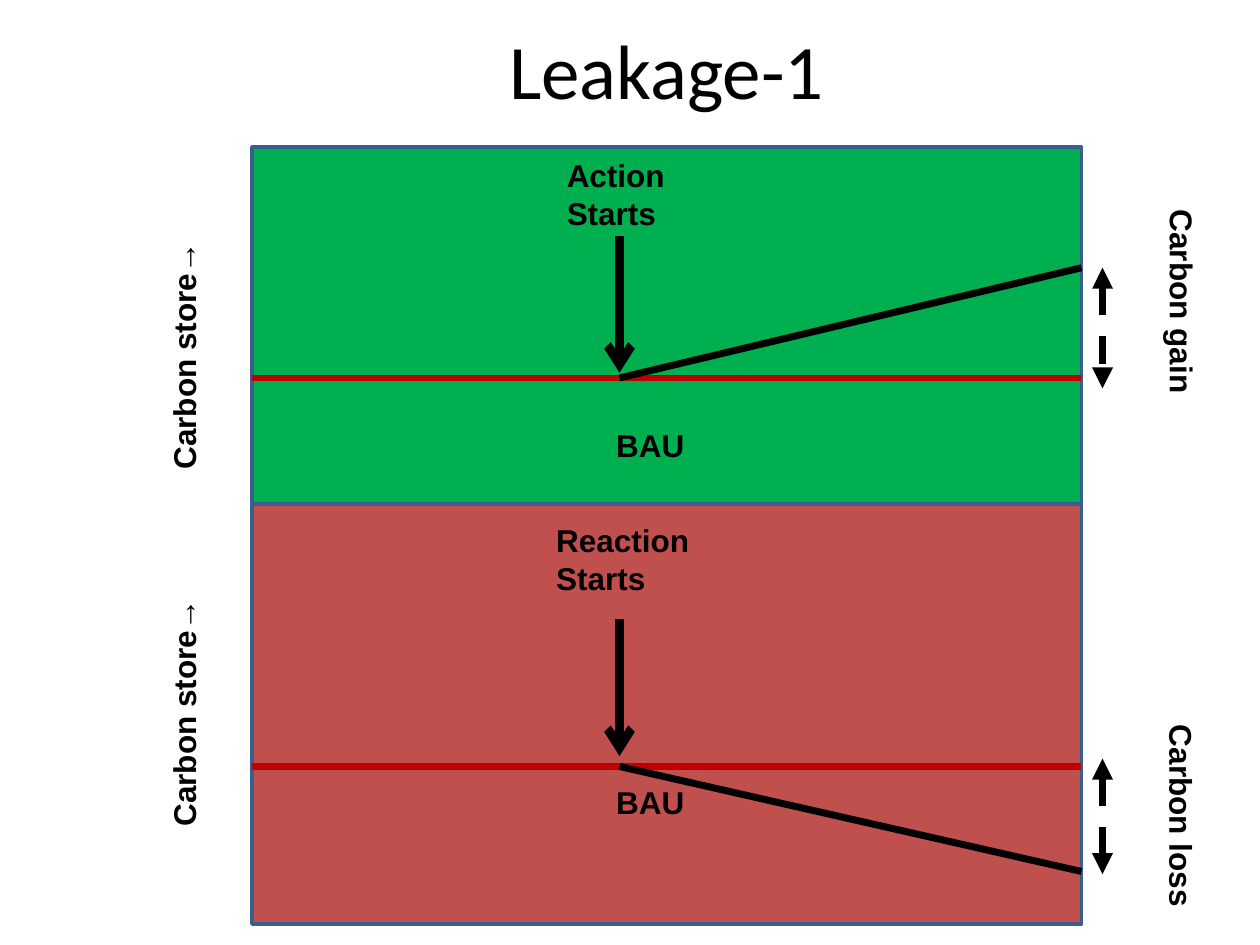
from lxml import etree
from pptx import Presentation
from pptx import util as u
from pptx.dml.color import RGBColor
from pptx.enum import dml, shapes, text
from pptx.oxml import ns

BLACK = RGBColor(0x00, 0x00, 0x00)
GREEN = RGBColor(0x00, 0xB0, 0x50)
RED = RGBColor(0xC0, 0x50, 0x4D)
BASELINE_RED = RGBColor(0xC0, 0x00, 0x00)
OUTLINE_BLUE = RGBColor(0x3A, 0x5F, 0x8C)

TITLE_FORMAT = {"name": "Calibri", "size": u.Pt(44)}
LABEL_FORMAT = {"name": "Arial", "size": u.Pt(18), "bold": True}

COLUMNS, ROWS = 120, 90  # grid of the slide, square cells
PANEL_WIDTH, PANEL_HEIGHT = 79, 40
START_COLUMN = 35  # where the action or reaction begins
ARROW_LENGTH = 13

PANELS = [
    {"box": (24, 14), "fill": GREEN, "baseline": 22, "trend_end": 11.5,
     "change": (11.5, 23), "start_row": 8.5,
     "start_label": ("Action\nStarts", (28.8, 0.3, 12.7, 8.5)),
     "change_label": ("Carbon gain", (78.5, 12.5, 20.2, 4.8))},
    {"box": (24, 48), "fill": RED, "baseline": 25, "trend_end": 35,
     "change": (24.25, 35.25), "start_row": 11,
     "start_label": ("Reaction\nStarts", (27.8, 1, 16.1, 8.5)),
     "change_label": ("Carbon loss", (78.6, 27.4, 19.9, 4.8))},
]


def format_font(font, values):
    for name, value in values.items():
        setattr(font, name, value)
    font.color.rgb = BLACK


def add_title(slide, box, wording):
    title = slide.shapes.title
    title.left, title.top, title.width, title.height = box
    frame = title.text_frame
    frame.text = wording
    frame.vertical_anchor = text.MSO_ANCHOR.MIDDLE
    paragraph = frame.paragraphs[0]
    paragraph.alignment = text.PP_ALIGN.CENTER
    format_font(paragraph.runs[0].font, TITLE_FORMAT)


def add_label(slide, box, wording, rotation=0):
    label = slide.shapes.add_textbox(*box)
    label.rotation = rotation
    frame = label.text_frame
    frame.word_wrap = False
    frame.auto_size = text.MSO_AUTO_SIZE.SHAPE_TO_FIT_TEXT
    frame.text = wording
    for paragraph in frame.paragraphs:
        format_font(paragraph.runs[0].font, LABEL_FORMAT)


def add_line(slide, start, end, color=BLACK, width=4, dash=None, head=None, tail=None):
    connector = slide.shapes.add_connector(
        shapes.MSO_CONNECTOR.STRAIGHT, *start, *end)
    line = connector.line
    line.color.rgb = color
    line.width = u.Pt(width)
    if dash:
        line.dash_style = dash
    properties = connector._element.spPr
    outline = properties.find(ns.qn("a:ln"))
    for tag, kind in (("a:headEnd", head), ("a:tailEnd", tail)):
        if kind:
            etree.SubElement(outline, ns.qn(tag), type=kind)
    etree.SubElement(properties, ns.qn("a:effectLst"))


def add_panel(slide, cell, panel):
    """Draw one carbon store diagram, with its parts counted in cells from its corner."""
    left, top = panel["box"]

    def point(column, row):
        return round((left + column) * cell), round((top + row) * cell)

    def area(column, row, width, height):
        return *point(column, row), round(width * cell), round(height * cell)

    background = slide.shapes.add_shape(
        shapes.MSO_SHAPE.RECTANGLE, *area(0, 0, PANEL_WIDTH, PANEL_HEIGHT))
    background.shadow.inherit = False
    background.fill.solid()
    background.fill.fore_color.rgb = panel["fill"]
    background.line.color.rgb = OUTLINE_BLUE
    background.line.width = u.Pt(2)

    baseline, start_row = panel["baseline"], panel["start_row"]
    change_column = PANEL_WIDTH + 2
    change_top, change_bottom = panel["change"]

    add_label(slide, area(-18.6, 17.4, 24.2, 4.8), "Carbon store→", 270)
    add_line(slide, point(0, baseline), point(PANEL_WIDTH, baseline), BASELINE_RED)
    add_label(slide, area(33.5, 26, 9, 4.8), "BAU")
    add_line(slide, point(START_COLUMN, baseline),
             point(PANEL_WIDTH, panel["trend_end"]))
    add_line(slide, point(change_column, change_top),
             point(change_column, change_bottom),
             dash=dml.MSO_LINE.DASH, head="triangle", tail="triangle")
    add_line(slide, point(START_COLUMN, start_row),
             point(START_COLUMN, start_row + ARROW_LENGTH), width=5, tail="arrow")
    wording, box = panel["start_label"]
    add_label(slide, area(*box), wording)
    wording, box = panel["change_label"]
    add_label(slide, area(*box), wording, 90)


def main():
    presentation = Presentation()
    presentation.slide_width = u.Inches(10)
    presentation.slide_height = u.Inches(7.5)
    cell = presentation.slide_width / COLUMNS
    slide = presentation.slides.add_slide(presentation.slide_layouts[5])
    title_box = [round(cells * cell) for cells in (14, -1, 99, 15)]
    add_title(slide, title_box, "Leakage-1")
    for panel in PANELS:
        add_panel(slide, cell, panel)
    presentation.save("out.pptx")


if __name__ == "__main__":
    main()
